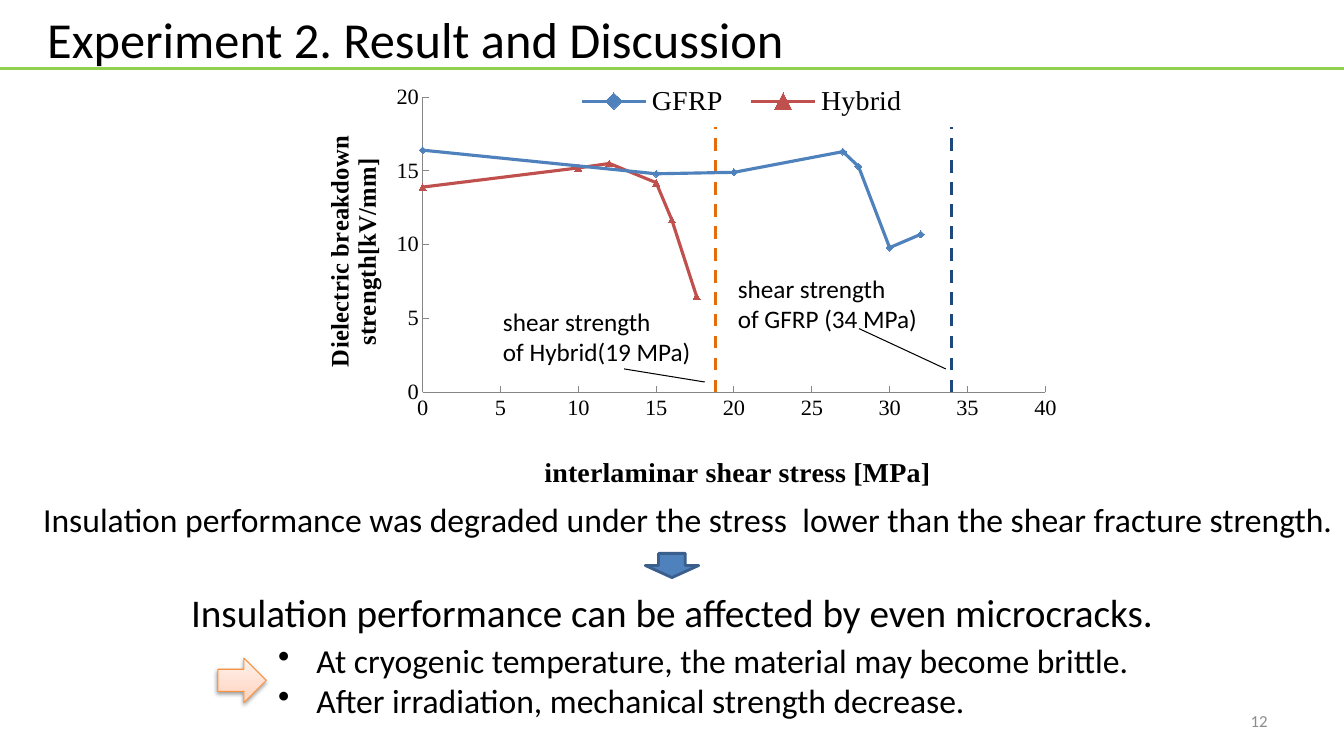
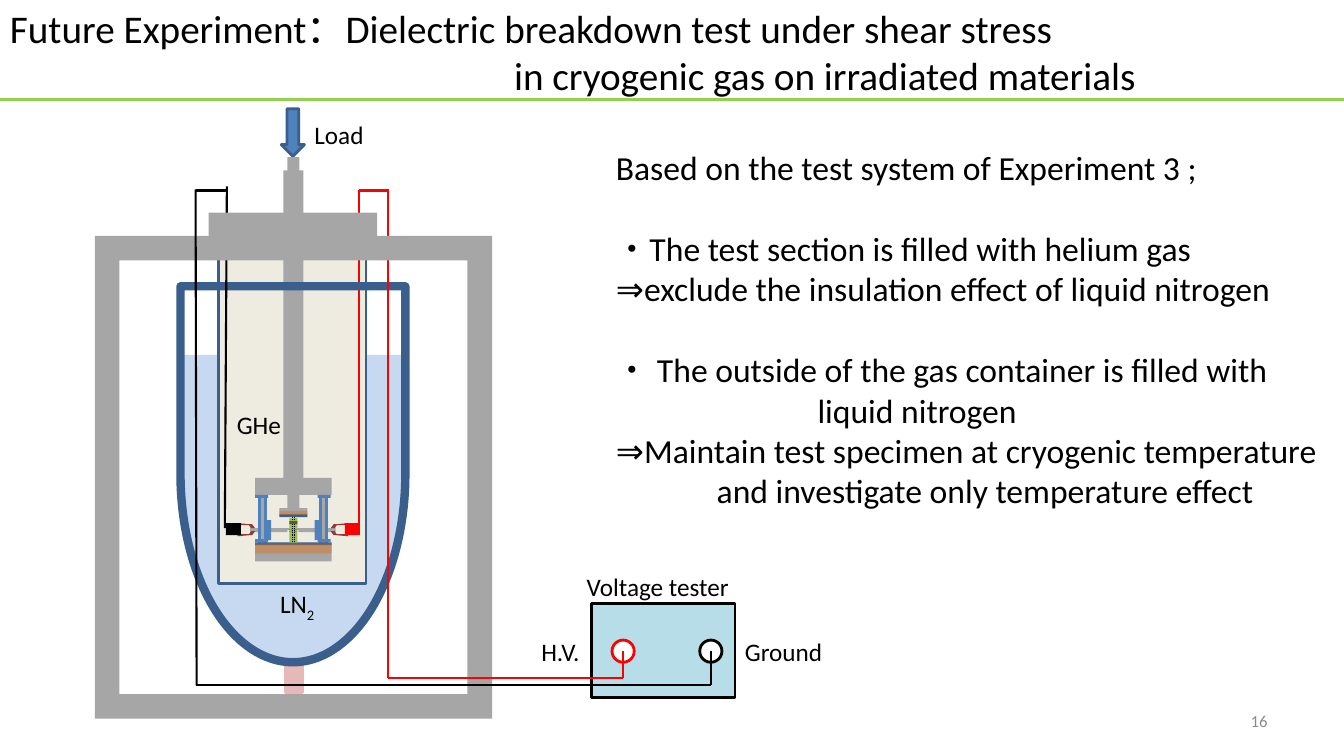
import dataclasses
import math
import typing

import lxml.etree
import pptx
import pptx.chart.data
import pptx.dml.color
import pptx.enum.chart
import pptx.enum.dml
import pptx.enum.shapes
import pptx.enum.text
import pptx.oxml
import pptx.oxml.ns
import pptx.util

Inches = pptx.util.Inches
Pt = pptx.util.Pt
qn = pptx.oxml.ns.qn
SHAPE = pptx.enum.shapes.MSO_SHAPE
ALIGN = pptx.enum.text.PP_ALIGN
ANCHOR = pptx.enum.text.MSO_ANCHOR
DASH = pptx.enum.dml.MSO_LINE
MARKER = pptx.enum.chart.XL_MARKER_STYLE

COLORS = {
    "black": "000000", "white": "FFFFFF", "red": "FF0000", "gray": "A6A6A6",
    "midgray": "808080", "number": "8C8C8C", "axis": "868686", "rule": "92D050",
    "blue": "4F81BD", "edge": "3A5F8C", "deep": "376092", "navy": "1F497D",
    "brick": "C0504D", "orange": "E46C0A", "amber": "F69240", "peach": "FFD2BD",
    "blush": "FFF2ED", "nitrogen": "C6D9F1", "helium": "EEECE1", "tester": "B7DEE8",
    "pink": "E6B9B8", "clip": "953735", "green": "9BBB59", "moss": "4F6228",
}
BODY_FONT = "Calibri"
CHART_FONT = "Times New Roman"
AXIS_X = 2.905  # vertical centre line of the cryostat
CLIP_Y = 5.255  # horizontal centre line of the specimen clips


@dataclasses.dataclass
class Line:
    text: str
    indent: float = 0
    gap: float = 0


@dataclasses.dataclass
class Block:
    left: float
    top: float
    width: float
    height: float
    fill: str = "gray"
    line: str = ""
    weight: float = 2
    kind: SHAPE = SHAPE.RECTANGLE
    turn: float = 0
    opacity: int = 100
    adjust: float | None = None


@dataclasses.dataclass
class Wire:
    x1: float
    y1: float
    x2: float
    y2: float
    color: str = "black"
    weight: float = 1.5
    dash: DASH | None = None


@dataclasses.dataclass
class Curve:
    name: str
    points: list[tuple[float, float]]
    color: str
    marker: MARKER = MARKER.NONE
    dash: DASH = DASH.SOLID


def rgb(name: str) -> pptx.dml.color.RGBColor:
    return pptx.dml.color.RGBColor.from_string(COLORS[name])


def write(page, text: str | list[Line], left: float, top: float, width: float, height: float, *,
          size: float = 18, color: str = "black", align: ALIGN = ALIGN.LEFT,
          anchor: ANCHOR = ANCHOR.TOP, wrap: bool = True, bullet: str = "", subscript: str = "") -> None:
    box = page.shapes.add_textbox(Inches(left), Inches(top), Inches(width), Inches(height))
    frame = box.text_frame
    frame.word_wrap = wrap
    frame.vertical_anchor = anchor
    lines = [Line(part) for part in text.split("\n")] if isinstance(text, str) else text
    for index, line in enumerate(lines):
        para = frame.add_paragraph() if index else frame.paragraphs[0]
        para.alignment = align
        para.space_before = Pt(line.gap)
        properties = para._p.get_or_add_pPr()
        properties.set("marL", str(Inches(line.indent)))
        if bullet:
            properties.set("indent", str(-Inches(line.indent)))
            lxml.etree.SubElement(properties, qn("a:buChar"), char=bullet)
        for content in filter(None, (line.text, subscript)):
            span = para.add_run()
            span.text = content
            span.font.size, span.font.name = Pt(size), BODY_FONT
            span.font.color.rgb = rgb(color)
            if content == subscript:
                span._r.get_or_add_rPr().set("baseline", "-25000")


def paint(shape, fill: str, line: str = "", weight: float = 2) -> None:
    shape.shadow.inherit = False
    if fill:
        shape.fill.solid()
        shape.fill.fore_color.rgb = rgb(fill)
    else:
        shape.fill.background()
    if line:
        shape.line.color.rgb = rgb(line)
        shape.line.width = Pt(weight)
    else:
        shape.line.fill.background()


def draw_block(page, block: Block):
    shape = page.shapes.add_shape(block.kind, Inches(block.left), Inches(block.top),
                                  Inches(block.width), Inches(block.height))
    paint(shape, block.fill, block.line, block.weight)
    shape.rotation = block.turn
    if block.adjust is not None:
        shape.adjustments[0] = block.adjust
    if block.opacity < 100:
        color = shape._element.spPr.find(qn("a:solidFill"))[0]
        lxml.etree.SubElement(color, qn("a:alpha"), val=str(block.opacity * 1000))
    return shape


def draw_wire(page, wire: Wire) -> None:
    line = page.shapes.add_connector(pptx.enum.shapes.MSO_CONNECTOR.STRAIGHT, Inches(wire.x1),
                                     Inches(wire.y1), Inches(wire.x2), Inches(wire.y2))
    line.line.color.rgb = rgb(wire.color)
    line.line.width = Pt(wire.weight)
    if wire.dash:
        line.line.dash_style = wire.dash
    lxml.etree.SubElement(line._element.spPr, qn("a:effectLst"))


def draw_parts(page, parts: typing.Iterable[Block | Wire]) -> None:
    for part in parts:
        (draw_wire if isinstance(part, Wire) else draw_block)(page, part)


def draw_outline(page, points: list[tuple[float, float]], fill: str) -> None:
    corners = [(Inches(x), Inches(y)) for x, y in points]
    builder = page.shapes.build_freeform(*corners[0])
    builder.add_line_segments(corners[1:], close=True)
    paint(builder.convert_to_shape(), fill)


def both_sides(*blocks: Block) -> list[Block]:
    """Each block followed by its mirror image across the cryostat axis."""
    return [side for block in blocks for side in
            (block, dataclasses.replace(block, left=2 * AXIS_X - block.left - block.width))]


def add_page(deck, title: list[Line], number: str, *, left: float, top: float,
             width: float, size: float, rule: float):
    page = deck.slides.add_slide(deck.slide_layouts[6])
    draw_wire(page, Wire(0, rule, 13.33, rule, "rule", 2.25))
    write(page, title, left, top, width, 0.77, size=size, anchor=ANCHOR.MIDDLE)
    write(page, number, 9.56, 6.95, 3.11, 0.4, size=12, color="number",
          align=ALIGN.RIGHT, anchor=ANCHOR.MIDDLE)
    return page


def place(part, **fractions: float) -> None:
    """Give a chart part a manual layout in fractions of the chart."""
    layout = part.find(qn("c:layout"))
    if layout is None:
        layout = pptx.oxml.parse_xml(f'<c:layout {pptx.oxml.ns.nsdecls("c")}/>')
        leading = [qn(tag) for tag in ("c:tx", "c:legendPos", "c:legendEntry")]
        part.insert(sum(child.tag in leading for child in part), layout)
    manual = lxml.etree.SubElement(layout, qn("c:manualLayout"))
    if part.tag == qn("c:plotArea"):
        lxml.etree.SubElement(manual, qn("c:layoutTarget"), val="inner")
    for key in ("x", "y"):
        lxml.etree.SubElement(manual, qn(f"c:{key}Mode"), val="edge")
    for key, value in fractions.items():
        lxml.etree.SubElement(manual, qn(f"c:{key}"), val=str(value))


def style_font(font, size: float, bold: bool = False) -> None:
    font.name, font.size, font.bold = CHART_FONT, Pt(size), bold
    font.color.rgb = rgb("black")


def style_axis(axis, title: str, size: float, maximum: float, x: float, y: float) -> None:
    axis.minimum_scale, axis.maximum_scale, axis.major_unit = 0, maximum, 5
    axis.has_major_gridlines = False
    axis.major_tick_mark = pptx.enum.chart.XL_TICK_MARK.INSIDE
    axis.minor_tick_mark = pptx.enum.chart.XL_TICK_MARK.NONE
    axis.format.line.color.rgb = rgb("axis")
    style_font(axis.tick_labels.font, 16)
    frame = axis.axis_title.text_frame
    frame.text = title
    for para in frame.paragraphs:
        for span in para.runs:
            style_font(span.font, size, True)
    place(axis.axis_title._element, x=x, y=y)


def add_strength_chart(page) -> None:
    curves = [
        Curve("GFRP", [(0, 16.4), (15, 14.8), (20, 14.9), (27, 16.3), (28, 15.3), (30, 9.8), (32, 10.7)],
              "blue", MARKER.DIAMOND),
        Curve("Hybrid", [(0, 13.9), (10, 15.2), (12, 15.5), (15, 14.2), (16, 11.7), (17.6, 6.5)],
              "brick", MARKER.TRIANGLE),
        Curve("Series 3", [(34, 0), (34, 18)], "navy", dash=DASH.DASH),
        Curve("Series 4", [(18.8, 0), (18.8, 18)], "orange", dash=DASH.DASH),
    ]
    data = pptx.chart.data.XyChartData()
    for curve in curves:
        series = data.add_series(curve.name)
        for x, y in curve.points:
            series.add_data_point(x, y)
    chart = page.shapes.add_chart(pptx.enum.chart.XL_CHART_TYPE.XY_SCATTER_LINES, Inches(2.88),
                                  Inches(0.76), Inches(7.72), Inches(4.17), data).chart
    style_font(chart.font, 16)
    chart.has_title = False
    plot = chart.plots[0]
    plot.vary_by_categories = False
    for series, curve in zip(plot.series, curves):
        series.smooth = False
        series.format.line.color.rgb = rgb(curve.color)
        series.format.line.width = Pt(2.25)
        series.format.line.dash_style = curve.dash
        series.marker.style = curve.marker
        if curve.marker != MARKER.NONE:
            series.marker.size = 5
            series.marker.format.fill.solid()
            series.marker.format.fill.fore_color.rgb = rgb(curve.color)
            series.marker.format.line.color.rgb = rgb(curve.color)
    style_axis(chart.category_axis, "interlaminar shear stress [MPa]", 20, 40, 0.32, 0.91)
    style_axis(chart.value_axis, "Dielectric breakdown\nstrength[kV/mm]", 18, 20, 0.04, 0.15)
    place(chart._chartSpace.chart.plotArea, x=0.17, y=0.05, w=0.8, h=0.72)
    chart.has_legend = True
    legend = chart.legend
    legend.position = pptx.enum.chart.XL_LEGEND_POSITION.TOP
    legend.include_in_layout = True
    style_font(legend.font, 20)
    for offset, hidden in enumerate((2, 3), start=1):
        legend._element.insert(offset, pptx.oxml.parse_xml(
            f'<c:legendEntry {pptx.oxml.ns.nsdecls("c")}><c:idx val="{hidden}"/>'
            '<c:delete val="1"/></c:legendEntry>'))
    place(legend._element, x=0.35, y=0.02, w=0.46, h=0.08)


def build_result_page(deck) -> None:
    page = add_page(deck, [Line("Experiment 2. Result and Discussion")], "12",
                    left=0.37, top=0, width=12.67, size=36, rule=0.68)
    add_strength_chart(page)
    write(page, "shear strength\nof GFRP (34 MPa)", 7.22, 2.66, 2.57, 0.54)
    write(page, "shear strength\nof Hybrid(19 MPa)", 4.89, 2.99, 2.62, 0.81)
    draw_parts(page, [Wire(9.38, 3.66, 8.52, 3.26, weight=0.75), Wire(6.99, 3.79, 6.19, 3.66, weight=0.75),
                      Block(6.4, 5.49, 0.53, 0.24, "blue", "edge", kind=SHAPE.DOWN_ARROW)])
    write(page, "Insulation performance was degraded under the stress  lower than the shear fracture strength.",
          0.33, 4.9, 13.04, 0.5, size=24)
    write(page, "Insulation performance can be affected by even microcracks.",
          1.23, 5.79, 10.87, 0.57, size=28, align=ALIGN.CENTER)
    write(page, [Line("At cryogenic temperature, the material may become brittle.", 0.38),
                 Line("After irradiation, mechanical strength decrease.", 0.38)],
          2.66, 6.3, 8.72, 0.91, size=24, bullet="•")
    arrow = draw_block(page, Block(2.16, 6.53, 0.48, 0.44, "peach", "amber", 0.75, SHAPE.RIGHT_ARROW))
    arrow.fill.gradient()
    arrow.fill.gradient_angle = 90
    for stop, color in zip(arrow.fill.gradient_stops, ("peach", "blush")):
        stop.color.rgb = rgb(color)
    shadow = lxml.etree.SubElement(arrow._element.spPr.find(qn("a:effectLst")), qn("a:outerShdw"),
                                   blurRad=str(Pt(3.1)), dist=str(Pt(1.6)), dir="5400000", rotWithShape="0")
    tint = lxml.etree.SubElement(shadow, qn("a:srgbClr"), val=COLORS["black"])
    lxml.etree.SubElement(tint, qn("a:alpha"), val="38000")


def draw_specimen(page) -> None:
    draw_parts(page, both_sides(
        Block(2.48, 5.24, 0.37, 0.04), Block(2.63, 5.16, 0.06, 0.2, "blue"), Block(2.77, 5.24, 0.14, 0.02),
        Block(2.57, 4.89, 0.06, 0.55, line="blue", weight=2.25)))
    draw_parts(page, [
        Block(2.85, 4.88, 0.12, 0.16), Block(2.53, 4.74, 0.76, 0.17), Block(2.53, 5.4, 0.76, 0.17),
        Block(2.53, 5.38, 0.76, 0.03, "deep"), Block(2.77, 5.1, 0.28, 0.03, "deep"),
        Block(2.77, 5.04, 0.28, 0.06), Block(2.87, 4.67, 0.1, 0.16),
        Block(2.77, 5.07, 0.28, 0.04, "orange", opacity=40),
        Block(2.53, 5.39, 0.76, 0.1, "orange", opacity=40)])
    clip = [(2.36, 5.32), (2.47, 5.31), (2.5, 5.31), (2.53, 5.27), (2.49, 5.27), (2.47, 5.3), (2.35, 5.3)]
    for flip_x in (False, True):
        for flip_y in (False, True):
            draw_outline(page, [(2 * AXIS_X - x if flip_x else x, 2 * CLIP_Y - y if flip_y else y)
                                for x, y in clip], "clip")
    draw_parts(page, both_sides(Block(2.53, 4.91, 0.13, 0.03, "blue"), Block(2.53, 5.35, 0.13, 0.03, "blue")))
    draw_parts(page, [Block(2.87, 5.14, 0.08, 0.24, "green"), Block(2.87, 5.17, 0.08, 0.03, "moss")])
    draw_parts(page, [Wire(2.87, y, 2.95, y, "midgray", 0.5, DASH.ROUND_DOT) for y in (5.25, 5.27)])
    draw_parts(page, [Wire(x, top, x, bottom, "black", 0.75, DASH.ROUND_DOT)
                      for x in (2.9, 2.92) for top, bottom in ((5.13, 5.17), (5.2, 5.38))])


def build_future_page(deck) -> None:
    page = add_page(deck, [Line("Future Experiment：Dielectric breakdown test under shear stress"),
                           Line("in cryogenic gas on irradiated materials", 5)], "16",
                    left=0, top=0.12, width=11.39, size=28, rule=0.99)
    bowl = [(AXIS_X + 1.115 * math.cos(math.pi * step / 40), 4.72 + 1.85 * math.sin(math.pi * step / 40))
            for step in range(41)]
    draw_outline(page, [(1.79, 3.52), (4.02, 3.52), *bowl], "nitrogen")
    draw_parts(page, [
        Block(2.17, 2.52, 1.46, 3.27, "helium", "edge"), Wire(3.56, 5.26, 3.56, 1.89, "red"),
        Block(5.87, 5.99, 1.42, 0.93, "tester", "black"), Block(2.81, 1.69, 0.2, 3.05)])
    draw_specimen(page)
    draw_parts(page, [
        Block(3.42, 5.19, 0.15, 0.12, "red"), Block(2.24, 5.19, 0.15, 0.12, "black"),
        Block(2.83, 6.58, 0.17, 0.29, "pink", "pink"),
        Block(1.04, 3.59, 3.73, 2.23, "", "edge", 6, SHAPE.FLOWCHART_DELAY, 90),
        Wire(2.23, 5.24, 2.25, 1.85), Wire(3.85, 6.73, 3.85, 1.88, "red"),
        Block(0.94, 2.34, 3.94, 4.79, kind=SHAPE.FRAME, adjust=0.062),
        Wire(3.86, 1.89, 3.56, 1.89, "red"), Wire(6.18, 6.73, 3.85, 6.73, "red"),
        Wire(7.05, 6.8, 1.94, 6.8), Wire(1.95, 6.8, 1.94, 1.88), Wire(2.25, 1.89, 1.94, 1.89)])
    for x, bottom, color in ((6.18, 6.73, "red"), (7.05, 6.8, "black")):
        draw_parts(page, [Block(x - 0.11, 6.35, 0.22, 0.22, "white", color, kind=SHAPE.OVAL),
                          Wire(x, bottom, x, 6.46, color)])
    draw_parts(page, [Block(2.79, 1.08, 0.23, 0.47, "blue", "edge", kind=SHAPE.DOWN_ARROW),
                      Block(2.85, 1.56, 0.12, 0.16), Block(2.07, 2.11, 1.67, 0.24)])
    for text, left, top, width in (("H.V.", 5.27, 6.26, 0.59), ("Ground", 7.29, 6.26, 0.98),
                                   ("Load", 3.02, 1.13, 0.7), ("Voltage tester", 5.72, 5.62, 1.63),
                                   ("GHe", 2.25, 4.01, 0.65)):
        write(page, text, left, top, width, 0.4, wrap=False)
    write(page, "LN", 2.68, 5.79, 0.56, 0.4, wrap=False, subscript="2")
    write(page, [Line("Based on the test system of Experiment 3 ;"),
                 Line("・The test section is filled with helium gas", gap=29),
                 Line("⇒exclude the insulation effect of liquid nitrogen"),
                 Line("・ The outside of the gas container is filled with", gap=29),
                 Line("liquid nitrogen", 2),
                 Line("⇒Maintain test specimen at cryogenic temperature"),
                 Line("and investigate only temperature effect", 1)], 6.01, 1.41, 7.42, 3.74, size=24)


def main() -> None:
    deck = pptx.Presentation()
    deck.slide_width, deck.slide_height = Inches(13.33), Inches(7.5)
    build_result_page(deck)
    build_future_page(deck)
    deck.save("out.pptx")


if __name__ == "__main__":
    main()
